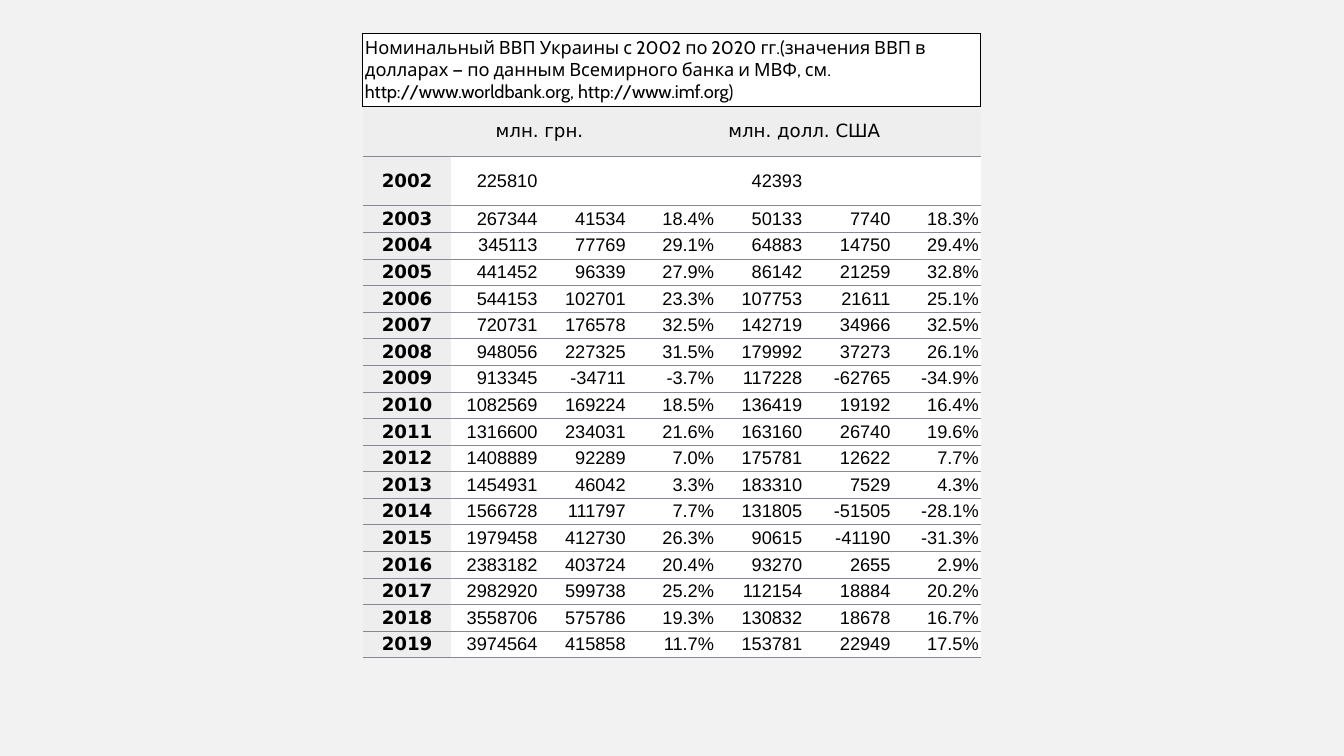
from lxml.etree import SubElement
from pptx import Presentation
from pptx.dml.color import RGBColor
from pptx.enum.text import MSO_ANCHOR as Anchor, PP_ALIGN as Align
from pptx.oxml.ns import qn
from pptx.util import Pt

TITLE = (
    "Номинальный ВВП Украины с 2002 по 2020 гг.(значения ВВП "
    "в долларах — по данным Всемирного банка и МВФ, "
    "см. http://www.worldbank.org, http://www.imf.org)"
)
HEADER = ("", "млн. грн.", "", "", "млн. долл. США", "", "")
GDP = [
    ("2002", "225810", "", "", "42393", "", ""),
    ("2003", "267344", "41534", "18.4%", "50133", "7740", "18.3%"),
    ("2004", "345113", "77769", "29.1%", "64883", "14750", "29.4%"),
    ("2005", "441452", "96339", "27.9%", "86142", "21259", "32.8%"),
    ("2006", "544153", "102701", "23.3%", "107753", "21611", "25.1%"),
    ("2007", "720731", "176578", "32.5%", "142719", "34966", "32.5%"),
    ("2008", "948056", "227325", "31.5%", "179992", "37273", "26.1%"),
    ("2009", "913345", "-34711", "-3.7%", "117228", "-62765", "-34.9%"),
    ("2010", "1082569", "169224", "18.5%", "136419", "19192", "16.4%"),
    ("2011", "1316600", "234031", "21.6%", "163160", "26740", "19.6%"),
    ("2012", "1408889", "92289", "7.0%", "175781", "12622", "7.7%"),
    ("2013", "1454931", "46042", "3.3%", "183310", "7529", "4.3%"),
    ("2014", "1566728", "111797", "7.7%", "131805", "-51505", "-28.1%"),
    ("2015", "1979458", "412730", "26.3%", "90615", "-41190", "-31.3%"),
    ("2016", "2383182", "403724", "20.4%", "93270", "2655", "2.9%"),
    ("2017", "2982920", "599738", "25.2%", "112154", "18884", "20.2%"),
    ("2018", "3558706", "575786", "19.3%", "130832", "18678", "16.7%"),
    ("2019", "3974564", "415858", "11.7%", "153781", "22949", "17.5%"),
]
ROWS = [(TITLE,) + ("",) * 6, HEADER] + GDP
MERGES = [(0, 0, 6), (1, 1, 2), (1, 4, 5)]

THEME = {
    "background": "F2F2F2", "header": "EEEEEE", "body": "FFFFFF",
    "text": "000000", "rule": "888899", "frame": "000000",
    "size": 13, "rule_width": 0.6, "frame_width": 1,
    "title_font": "Cabin", "label_font": "DejaVu Sans", "value_font": "Arial",
}
STYLES = {
    "title": ("title_font", False, Align.LEFT, "body"),
    "header": ("label_font", False, Align.CENTER, "header"),
    "year": ("label_font", True, Align.CENTER, "header"),
    "value": ("value_font", False, Align.RIGHT, "body"),
}
PLAIN_STYLE = "{2D5ABB26-0587-4C30-8999-92F81FD0307C}"
LEFT, TOP, COLUMN_WIDTH = 259.2, 24, 63.06
ROW_HEIGHTS = [52, 35.5, 35.5] + [19] * (len(GDP) - 1)
INSET = 1.5


def apply(target, values):
    for name, value in values.items():
        setattr(target, name, value)


def role_of(row, column):
    if row < 2:
        return ("title", "header")[row]
    return "value" if column else "year"


def add_border(cell, side, kind):
    properties = cell._tc.get_or_add_tcPr()
    line = SubElement(properties, qn("a:ln" + side), w=str(Pt(THEME[kind + "_width"])))
    fill = SubElement(line, qn("a:solidFill"))
    SubElement(fill, qn("a:srgbClr"), val=THEME[kind])


def add_borders(cell, row):
    if row == 0:
        for side in "LRTB":
            add_border(cell, side, "frame")
    else:
        add_border(cell, "T", "frame" if row == 1 else "rule")
        add_border(cell, "B", "rule")


def format_cell(cell, row, column, text):
    font_name, bold, alignment, fill = STYLES[role_of(row, column)]
    add_borders(cell, row)
    cell.fill.solid()
    cell.fill.fore_color.rgb = RGBColor.from_string(THEME[fill])
    sides = ("left", "right", "top", "bottom")
    apply(cell, {f"margin_{side}": Pt(INSET) for side in sides})
    cell.vertical_anchor = Anchor.MIDDLE
    paragraph = cell.text_frame.paragraphs[0]
    paragraph.alignment = alignment
    if text:
        run = paragraph.add_run()
        run.text = text
        apply(run.font, {"name": THEME[font_name], "size": Pt(THEME["size"]), "bold": bold})
        run.font.color.rgb = RGBColor.from_string(THEME["text"])


def add_gdp_table(slide):
    columns = len(HEADER)
    shape = slide.shapes.add_table(
        len(ROWS), columns, Pt(LEFT), Pt(TOP),
        Pt(COLUMN_WIDTH * columns), Pt(sum(ROW_HEIGHTS)))
    table = shape.table
    apply(table, {"first_row": False, "horz_banding": False})
    table._tbl.tblPr.find(qn("a:tableStyleId")).text = PLAIN_STYLE
    for column in table.columns:
        column.width = Pt(COLUMN_WIDTH)
    for table_row, height in zip(table.rows, ROW_HEIGHTS):
        table_row.height = Pt(height)
    for row, first, last in MERGES:
        table.cell(row, first).merge(table.cell(row, last))
    for row, texts in enumerate(ROWS):
        for column, text in enumerate(texts):
            format_cell(table.cell(row, column), row, column, text)


def main():
    presentation = Presentation()
    apply(presentation, {"slide_width": Pt(960), "slide_height": Pt(540)})
    slide = presentation.slides.add_slide(presentation.slide_layouts[6])
    background = slide.background.fill
    background.solid()
    background.fore_color.rgb = RGBColor.from_string(THEME["background"])
    add_gdp_table(slide)
    presentation.save("out.pptx")


if __name__ == "__main__":
    main()
